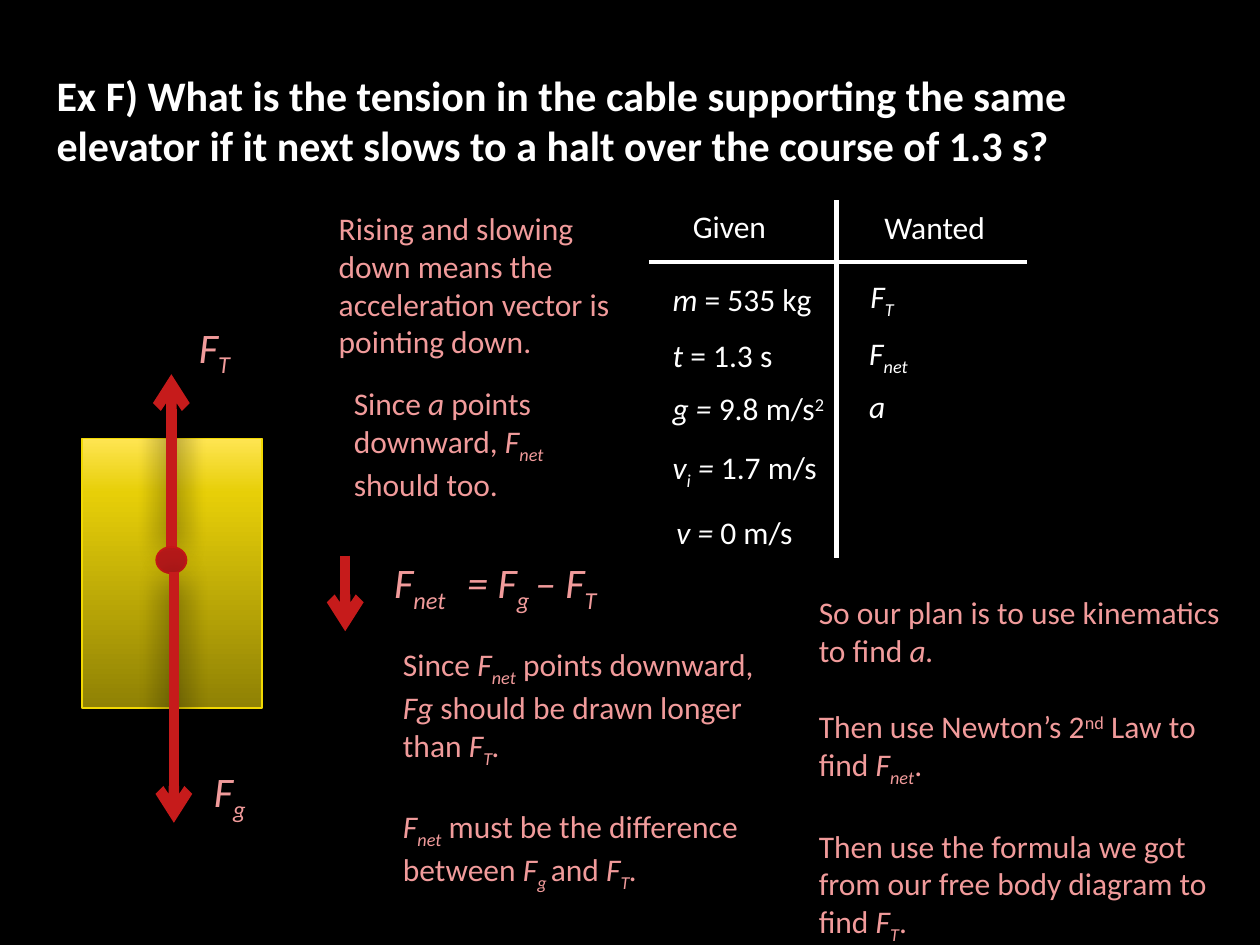
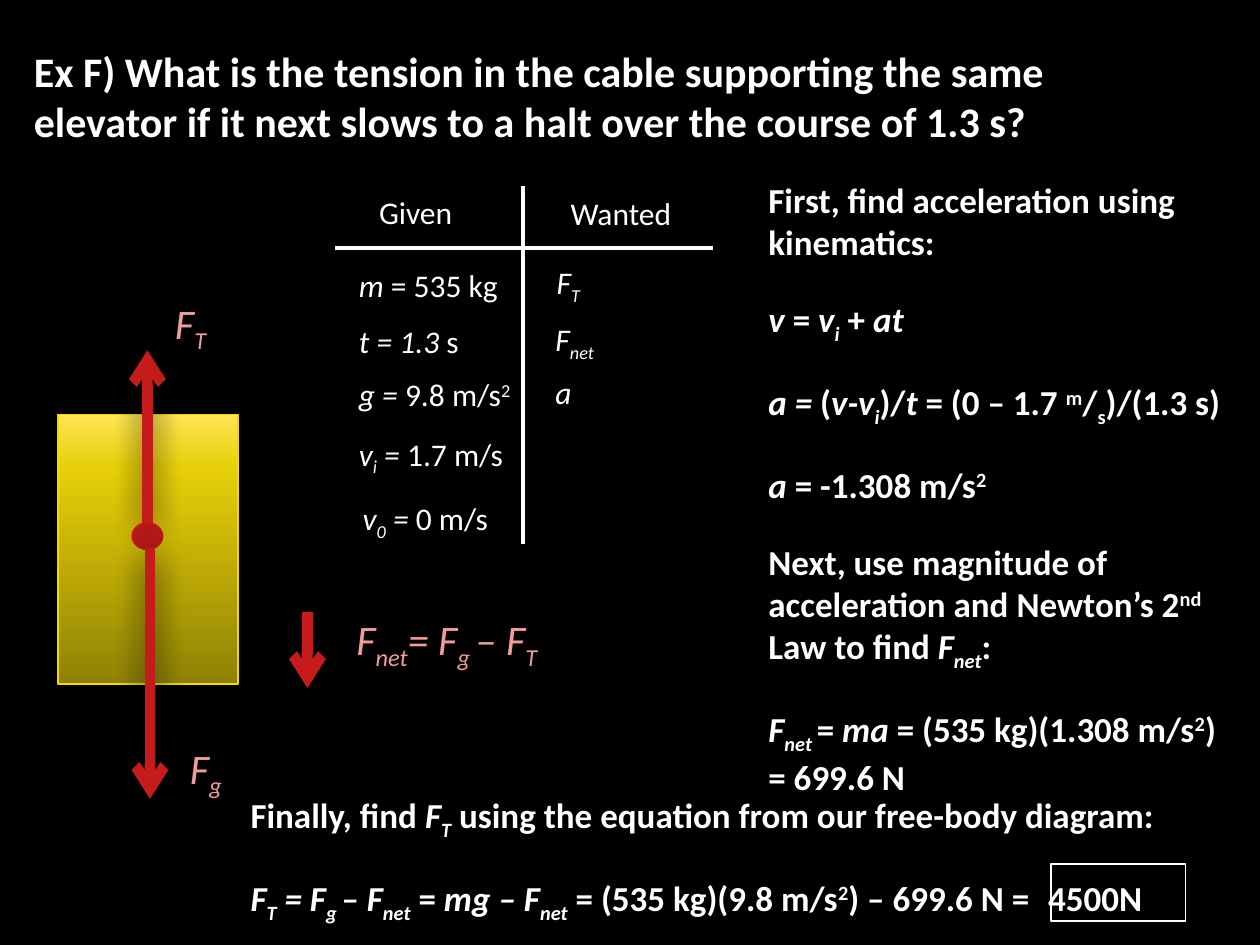
import copy
from lxml import etree
from pptx import Presentation
from pptx import util as u
from pptx.dml.color import RGBColor
from pptx.enum import shapes as sh
from pptx.oxml import ns

Inches = u.Inches
hue = RGBColor.from_string
WHITE, PINK, RED = "FFFFFF", "F19B9B", "C61B1B"
TITLE = ("Ex F) What is the tension in the cable supporting the same "
         "elevator if it next slows to a halt over the course of 1.3 s?")
SHADE = (f'<a:effectLst xmlns:a="{ns.namespaces("a")["a"]}">'
         '<a:outerShdw blurRad="228600" dist="38100" dir="5400000" rotWithShape="0">'
         '<a:srgbClr val="000000"><a:alpha val="80000"/></a:srgbClr>'
         '</a:outerShdw></a:effectLst>')


def put(slide, x, y, w, h, paras, size=18, color=WHITE, bold=False, gap=0, tab=None):
    """Add a text box; in the text * toggles italic, _ subscript, ^ superscript."""
    box = slide.shapes.add_textbox(Inches(x), Inches(y), Inches(w), Inches(h))
    frame = box.text_frame
    frame.word_wrap = True
    for i, words in enumerate(paras):
        para = frame.paragraphs[0] if i == 0 else frame.add_paragraph()
        if i:
            para.space_before = u.Pt(gap)
        if tab and "\t" in words:
            tabs = etree.SubElement(para._p.get_or_add_pPr(), ns.qn("a:tabLst"))
            etree.SubElement(tabs, ns.qn("a:tab"), pos=str(Inches(tab)), algn="l")
        font = para.font
        font.name, font.size, font.bold = "Calibri", u.Pt(size), bold
        font.color.rgb = hue(color)
        on, part = {"*": False, "_": False, "^": False}, ""
        for sign in words + "*":
            if sign not in on:
                part += sign
                continue
            if part:
                run = para.add_run()
                run.text = part
                if on["*"]:
                    run.font.italic = True
                if on["_"] or on["^"]:
                    base = "-25000" if on["_"] else "30000"
                    run._r.get_or_add_rPr().set("baseline", base)
            on[sign], part = not on[sign], ""


def rule(slide, x1, y1, x2, y2, color=WHITE, width=2.5, arrow=False):
    """Draw a plain line, or an arrow with a soft shadow."""
    line = slide.shapes.add_connector(sh.MSO_CONNECTOR.STRAIGHT, Inches(x1),
                                      Inches(y1), Inches(x2), Inches(y2))
    line.line.color.rgb = hue(color)
    line.line.width = u.Pt(width)
    props = line._element.spPr
    if arrow:
        etree.SubElement(line.line._get_or_add_ln(), ns.qn("a:tailEnd"), type="arrow")
        props.append(etree.fromstring(SHADE))
    else:
        etree.SubElement(props, ns.qn("a:effectLst"))


prs = Presentation()
prs.slide_width, prs.slide_height = Inches(10), Inches(7.5)

# Title corner, elevator corner, table corner, net arrow top, rows that differ
plans = [
    ((0.35, 0.5), (0.65, 3.48), (5.15, 1.59), (2.74, 4.41), "*t *= 1.3 s", "*v = *0 m/s"),
    ((0.17, 0.31), (0.46, 3.29), (2.66, 1.48), (2.44, 4.86), "*t = 1.3* s", "*v_0_ = *0 m/s"),
]
slides = []
for head, (ex, ey), (tx, ty), (nx, ny), time, speed in plans:
    slide = prs.slides.add_slide(prs.slide_layouts[6])
    slides.append(slide)
    slide.background.fill.solid()
    slide.background.fill.fore_color.rgb = hue("000000")
    put(slide, *head, 8.89, 1.31, [TITLE], 24, bold=True)

    # Elevator
    car = slide.shapes.add_shape(sh.MSO_SHAPE.RECTANGLE, Inches(ex), Inches(ey),
                                 Inches(1.43), Inches(2.14))
    car.shadow.inherit = False
    car.fill.gradient()
    car.fill.gradient_angle = 90
    first = car.fill.gradient_stops[0]._gs
    first.addnext(copy.deepcopy(first))
    stops = [(0, "8F8105"), (0.8, "E7CF08"), (1, "FFE552")]
    for stop, (place, color) in zip(car.fill.gradient_stops, stops):
        stop.position = place
        stop.color.rgb = hue(color)
    car.line.color.rgb = hue("F2D902")
    car.line.width = u.Pt(1)

    # Forces on the elevator
    rule(slide, ex + 0.71, ey + 0.86, ex + 0.71, ey - 0.51, RED, 6, True)
    dot = slide.shapes.add_shape(sh.MSO_SHAPE.OVAL, Inches(ex + 0.59),
                                 Inches(ey + 0.86), Inches(0.24), Inches(0.21))
    dot.shadow.inherit = False
    dot.fill.solid()
    dot.fill.fore_color.rgb = hue("B41919")
    dot.line.color.rgb = hue("C61616")
    dot.line.width = u.Pt(1)
    rule(slide, ex + 0.73, ey + 1.06, ex + 0.73, ey + 3.05, RED, 6, True)
    put(slide, ex + 0.83, ey - 0.98, 0.59, 0.5, ["*F_T_"], 24, PINK)
    put(slide, ex + 0.95, ey + 2.55, 0.47, 0.5, ["*F_g_"], 24, PINK)
    rule(slide, nx, ny, nx, ny + 0.6, RED, 6, True)

    # Given and wanted
    rule(slide, tx, ty + 0.49, tx + 3, ty + 0.49)
    rule(slide, tx + 1.49, ty, tx + 1.49, ty + 2.84)
    cells = [
        (0.25, 0, "Given"), (1.77, 0.01, "Wanted"),
        (0.09, 0.58, "*m* = 535 kg"), (0.09, 1.03, time),
        (0.09, 1.45, "*g = *9.8 m/s^2^"), (0.09, 1.92, "*v_i_ = *1.7 m/s"),
        (0.12, 2.43, speed),
        (1.66, 0.56, "*F_T_"), (1.65, 1.01, "*F_net_"), (1.65, 1.43, "*a"),
    ]
    for dx, dy, words in cells:
        put(slide, tx + dx, ty + dy, 1.45, 0.4, [words])

# Slide 1: reasoning
one, two = slides
put(one, 2.59, 1.61, 2.57, 1.31,
    ["Rising and slowing down means the acceleration vector is pointing down."], color=PINK)
put(one, 2.71, 3, 2.24, 1.01, ["Since *a* points downward, *F_net_* should too."], color=PINK)
put(one, 3.03, 4.37, 0.88, 0.5, ["*F_net_"], 24, PINK)
put(one, 3.61, 4.37, 1.69, 0.5, ["*= F_g _– F_T_"], 24, PINK)
put(one, 3.1, 5.07, 3, 1.92, [
    "Since *F_net_* points downward, *Fg* should be drawn longer than *F_T_.",
    "*F_net_* must be the difference between *F_g _*and* F_T_.",
], color=PINK, gap=22)
put(one, 6.4, 4.66, 3.44, 2.73, [
    "So our plan is to use kinematics to find *a.",
    "Then use Newton’s 2^nd^ Law to find *F_net_*.",
    "Then use the formula we got from our free body diagram to find *F_T_*.",
], color=PINK, gap=22)

# Slide 2: solution
put(two, 2.73, 4.82, 1.92, 0.5, ["*F_net_= F_g _– F_T_"], 24, PINK)
put(two, 6, 1.37, 3.82, 5.07, [
    "First, find acceleration using kinematics:",
    "*v* = *v_i_* + *at",
    "*a = *(*v-v_i_*)/*t* = (0 – 1.7 ^m^/_s_)/(1.3 s)",
    "*a *= -1.308 m/s^2^",
    "Next, use magnitude of acceleration and Newton’s 2^nd^ Law to find *F_net_*:",
    "*F_net _*= *ma *= (535 kg)(1.308 m/s^2^) = 699.6 N",
], 20, bold=True, gap=20)
put(two, 1.89, 6.25, 8.11, 1.06, [
    "Finally, find *F_T_* using the equation from our free-body diagram:",
    "*F_T_ = F_g _– F_net_* = *mg – F_net_* = (535 kg)(9.8 m/s^2^) – 699.6 N =\t4500N",
], 20, bold=True, gap=20, tab=6.33)
frame = two.shapes.add_shape(sh.MSO_SHAPE.RECTANGLE, Inches(8.34), Inches(6.86),
                             Inches(1.07), Inches(0.45))
frame.shadow.inherit = False
frame.fill.background()
frame.line.color.rgb = hue(WHITE)
frame.line.width = u.Pt(1)

prs.save("out.pptx")
